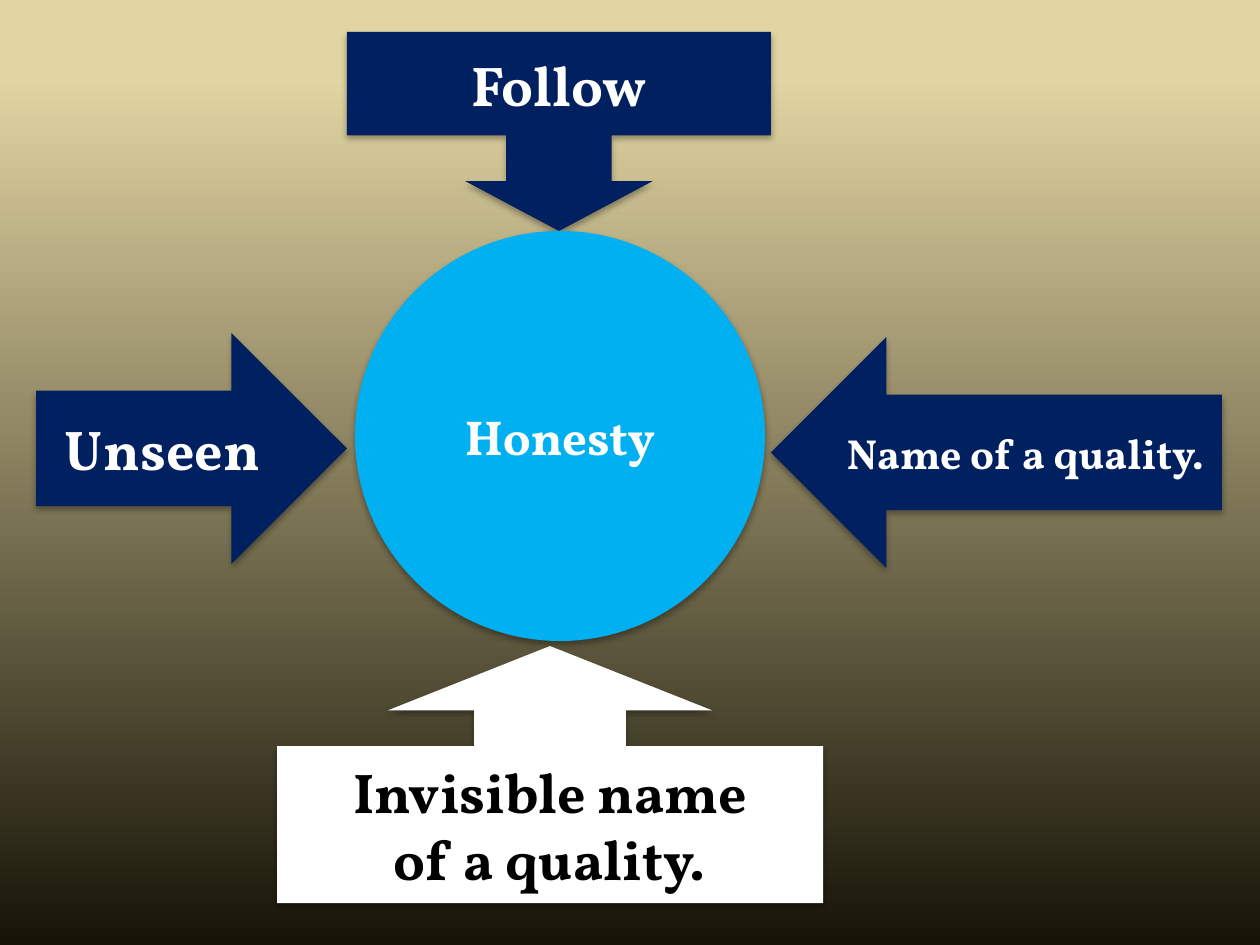
import pptx
import pptx.dml.color
import pptx.enum.shapes
import pptx.enum.text
import pptx.oxml
import pptx.oxml.ns
import pptx.util

EMU_PER_PX = 914400 / 126
FONT = "Vollkorn"
NAVY, SKY, WHITE, BLACK = "002060", "00B0F0", "FFFFFF", "000000"
SAND, DARK_BROWN = "E2D5A3", "171407"
SHAPES = pptx.enum.shapes.MSO_SHAPE


def px(length):
    return pptx.util.Emu(round(length * EMU_PER_PX))


def color(hex_string):
    return pptx.dml.color.RGBColor.from_string(hex_string)


def paint_background(slide):
    fill = slide.background.fill
    fill.gradient()
    fill.gradient_angle = 270  # counter-clockwise, so top to bottom
    for stop, position, hex_string in zip(
        fill.gradient_stops, (0.08, 1), (SAND, DARK_BROWN)
    ):
        stop.position = position
        stop.color.rgb = color(hex_string)


def add_soft_shadow(shape):
    shape.shadow.inherit = False
    effects = shape._element.spPr.find(pptx.oxml.ns.qn("a:effectLst"))
    effects.append(pptx.oxml.parse_xml(
        f'<a:outerShdw {pptx.oxml.ns.nsdecls("a")} blurRad="{pptx.util.Pt(3.5)}"'
        f' dist="{pptx.util.Pt(2.2)}" dir="5400000" rotWithShape="0">'
        '<a:srgbClr val="000000"><a:alpha val="32000"/></a:srgbClr></a:outerShdw>'
    ))


def add_label(shape, lines, size, text_color):
    frame = shape.text_frame
    frame.word_wrap = True
    frame.vertical_anchor = pptx.enum.text.MSO_ANCHOR.MIDDLE
    for index, line in enumerate(lines):
        paragraph = frame.add_paragraph() if index else frame.paragraphs[0]
        paragraph.alignment = pptx.enum.text.PP_ALIGN.CENTER
        run = paragraph.add_run()
        run.text = line
        run.font.name = FONT
        run.font.size = pptx.util.Pt(size)
        run.font.bold = True
        run.font.color.rgb = color(text_color)


def add_block(slide, kind, box, lines, size, fill=NAVY, text_color=WHITE,
              adjustments=()):
    """Add a shadowed shape with a centred label in box (left, top, width, height)."""
    shape = slide.shapes.add_shape(kind, *map(px, box))
    for index, value in enumerate(adjustments):
        shape.adjustments[index] = value
    shape.fill.solid()
    shape.fill.fore_color.rgb = color(fill)
    shape.line.fill.background()
    add_soft_shadow(shape)
    add_label(shape, lines, size, text_color)


def build_honesty_diagram(slide, left, top):
    """Place the circle and the four arrows pointing at it from (left, top)."""
    def at(x, y, width, height):
        return left + x, top + y, width, height

    add_block(slide, SHAPES.RIGHT_ARROW, at(0, 301, 311, 231), ["Unseen"], 32)
    add_block(slide, SHAPES.LEFT_ARROW, at(735, 305, 451, 231),
              ["Name of a quality."], 24)
    add_block(slide, SHAPES.UP_ARROW_CALLOUT, at(241, 614, 546, 257),
              ["Invisible name", "of a quality."], 32, WHITE, BLACK,
              (0.59, 0.63, 0.25, 0.61))
    add_block(slide, SHAPES.DOWN_ARROW_CALLOUT, at(311, 0, 424, 199),
              ["Follow"], 32, adjustments=(0.53, 0.47, 0.25, 0.52))
    add_block(slide, SHAPES.OVAL, at(319, 199, 410, 410), ["Honesty"], 28, SKY)


def main():
    presentation = pptx.Presentation()
    presentation.slide_width = px(1260)
    presentation.slide_height = px(945)
    slide = presentation.slides.add_slide(presentation.slide_layouts[6])
    paint_background(slide)
    build_honesty_diagram(slide, 36, 32)
    presentation.save("out.pptx")


if __name__ == "__main__":
    main()
